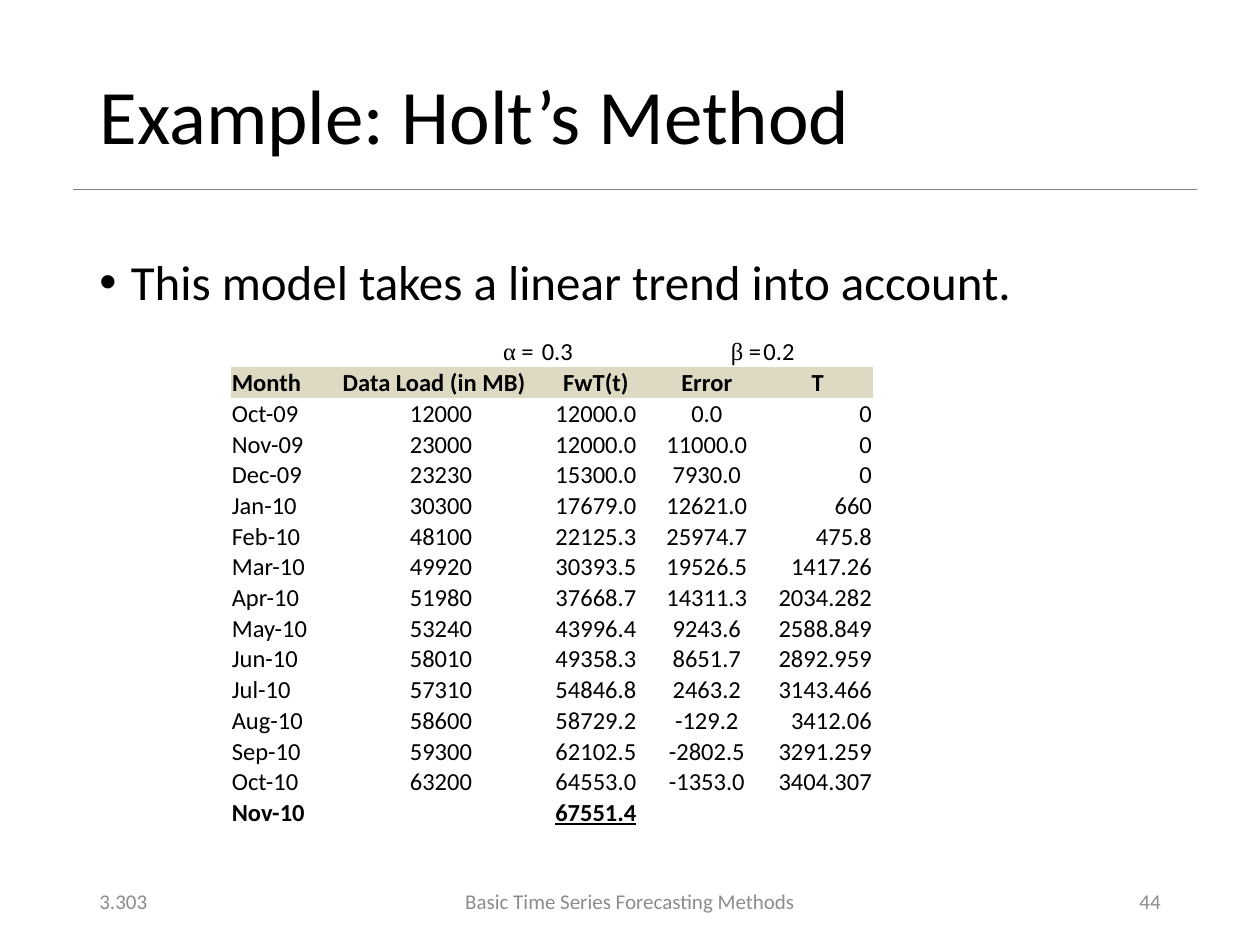
from lxml import etree
from pptx import Presentation
from pptx import util as u
from pptx.dml.color import RGBColor
from pptx.enum import shapes, text
from pptx.oxml.ns import qn


def color(value):
    return RGBColor.from_string(value)


def style(para, size, ink="000000", align=text.PP_ALIGN.LEFT, bold=False):
    para.alignment = align
    for span in para.runs:
        span.font.name = "Calibri"
        span.font.size = u.Pt(size)
        span.font.bold = bold
        span.font.color.rgb = color(ink)


LEFT, CENTER, RIGHT = text.PP_ALIGN.LEFT, text.PP_ALIGN.CENTER, text.PP_ALIGN.RIGHT
MARGIN, CONTENT = 0.69, 8.62

deck = Presentation()
deck.slide_width, deck.slide_height = u.Inches(10), u.Inches(7.5)
page = deck.slides.add_slide(deck.slide_layouts[5])

rule = page.shapes.add_connector(
    shapes.MSO_CONNECTOR.STRAIGHT, u.Inches(0.58), u.Inches(1.5), u.Inches(9.5), u.Inches(1.5)
)
rule.line.color.rgb = color("808080")
rule.line.width = u.Pt(0.5)
etree.SubElement(rule._element.spPr, qn("a:effectLst"))

title = page.shapes.title
title.left, title.top = u.Inches(MARGIN), u.Inches(0.4)
title.width, title.height = u.Inches(CONTENT), u.Inches(1.1)
title.text_frame.text = "Example: Holt’s Method"
title.text_frame.vertical_anchor = text.MSO_ANCHOR.MIDDLE
title.text_frame.paragraphs[0].line_spacing = 0.9
style(title.text_frame.paragraphs[0], 44)

body = page.shapes.add_textbox(u.Inches(MARGIN), u.Inches(2), u.Inches(CONTENT), u.Inches(4.76))
body.text_frame.word_wrap = True
body.text_frame.text = "This model takes a linear trend into account."
para = body.text_frame.paragraphs[0]
properties = para._p.get_or_add_pPr()
properties.set("marL", str(u.Inches(0.25)))
properties.set("indent", str(-u.Inches(0.25)))
etree.SubElement(properties, qn("a:buFont"), typeface="Arial")
etree.SubElement(properties, qn("a:buChar"), char="•")
para.line_spacing = 0.9
style(para, 28)

footers = [
    ("3.303", MARGIN, 2.25, LEFT),
    ("Basic Time Series Forecasting Methods", 3.31, 3.38, CENTER),
    ("44", 7.06, 2.25, RIGHT),
]
for words, left, width, align in footers:
    box = page.shapes.add_textbox(u.Inches(left), u.Inches(6.95), u.Inches(width), u.Inches(0.4))
    box.text_frame.word_wrap = True
    box.text_frame.vertical_anchor = text.MSO_ANCHOR.MIDDLE
    box.text_frame.text = words
    style(box.text_frame.paragraphs[0], 12, "8C8C8C", align)

records = [
    ["", "α = ", "0.3", "β =", "0.2"],
    ["Month", "Data Load (in MB)", "FwT(t)", "Error", "T"],
    ["Oct-09", "12000", "12000.0", "0.0", "0"],
    ["Nov-09", "23000", "12000.0", "11000.0", "0"],
    ["Dec-09", "23230", "15300.0", "7930.0", "0"],
    ["Jan-10", "30300", "17679.0", "12621.0", "660"],
    ["Feb-10", "48100", "22125.3", "25974.7", "475.8"],
    ["Mar-10", "49920", "30393.5", "19526.5", "1417.26"],
    ["Apr-10", "51980", "37668.7", "14311.3", "2034.282"],
    ["May-10", "53240", "43996.4", "9243.6", "2588.849"],
    ["Jun-10", "58010", "49358.3", "8651.7", "2892.959"],
    ["Jul-10", "57310", "54846.8", "2463.2", "3143.466"],
    ["Aug-10", "58600", "58729.2", "-129.2", "3412.06"],
    ["Sep-10", "59300", "62102.5", "-2802.5", "3291.259"],
    ["Oct-10", "63200", "64553.0", "-1353.0", "3404.307"],
    ["Nov-10", "", "67551.4", "", ""],
]
parameter_row, header_row, forecast_row = 0, 1, len(records) - 1
data_aligns = [LEFT, CENTER, CENTER, CENTER, RIGHT]
row_aligns = {
    parameter_row: [LEFT, RIGHT, LEFT, RIGHT, LEFT],
    header_row: [LEFT, LEFT, CENTER, CENTER, CENTER],
}

frame = page.shapes.add_table(
    len(records), 5, u.Inches(1.83), u.Inches(2.67), u.Inches(5.08), u.Inches(3.9)
)
table = frame.table
table.first_row = table.horz_banding = False
table._tbl.tblPr.find(qn("a:tableStyleId")).text = "{2D5ABB26-0587-4C30-8999-92F81FD0307C}"
for column, width in zip(table.columns, [0.88, 1.58, 0.88, 0.88, 0.88]):
    column.width = u.Inches(width)

for row, record in enumerate(records):
    table.rows[row].height = u.Inches(0.21)
    aligns = row_aligns.get(row, data_aligns)
    for column, words in enumerate(record):
        cell = table.cell(row, column)
        cell.margin_left = cell.margin_right = cell.margin_top = u.Inches(0.01)
        cell.margin_bottom = 0
        cell.vertical_anchor = text.MSO_ANCHOR.BOTTOM
        if row == header_row:
            cell.fill.solid()
            cell.fill.fore_color.rgb = color("DDD9C3")
        else:
            cell.fill.background()
        para = cell.text_frame.paragraphs[0]
        if not words:
            para._p.get_or_add_endParaRPr().set("sz", "1400")
            continue
        greek = words[0] in "αβ"
        for part in [words[0], words[1:]] if greek else [words]:
            para.add_run().text = part
        style(para, 14, align=aligns[column], bold=row in (header_row, forecast_row))
        if greek:
            para.runs[0].font.name = "Times New Roman"

table.cell(forecast_row, 2).text_frame.paragraphs[0].runs[0].font.underline = True

deck.save("out.pptx")
